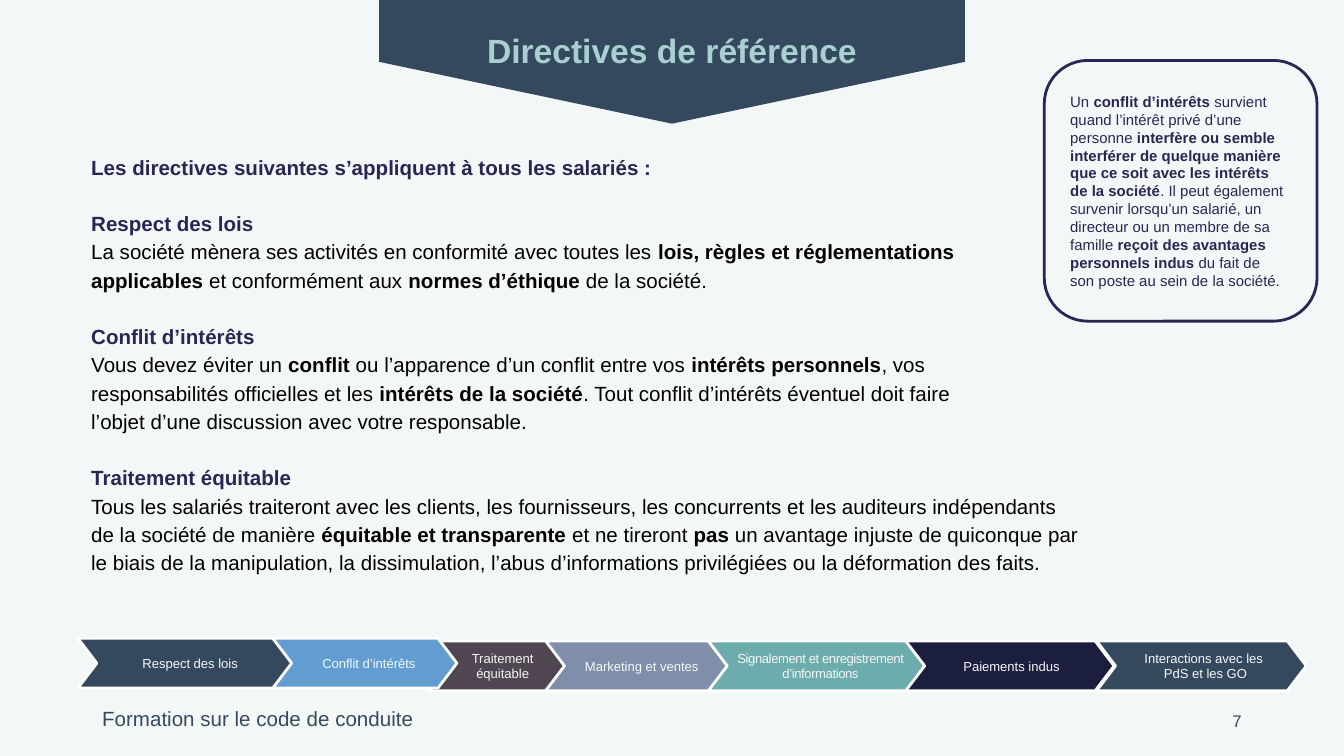
from pptx import Presentation
from pptx.dml.color import RGBColor
from pptx.enum.shapes import MSO_SHAPE as Shape
from pptx.enum.text import MSO_ANCHOR as Anchor, MSO_AUTO_SIZE as AutoSize, PP_ALIGN as Align
from pptx.util import Inches, Pt

COLORS = {
    "background": "F4F7F7", "slate": "34495E", "mint": "AACFD0",
    "navy": "242852", "black": "000000", "white": "FFFFFF",
    "plum": "4F4651", "midnight": "1B1E3D", "steel": "7F8FA9",
    "teal": "6DACAC", "blue": "629DD1",
}


def rgb(name):
    return RGBColor.from_string(COLORS[name])


def write(shape, paragraphs, size, color, insets, align=Align.LEFT, anchor=Anchor.TOP):
    """Fill a shape with text; asterisks switch bold on and off, newlines break lines."""
    frame = shape.text_frame
    frame.word_wrap = True
    frame.auto_size = AutoSize.NONE
    frame.vertical_anchor = anchor
    (frame.margin_left, frame.margin_top,
     frame.margin_right, frame.margin_bottom) = [Inches(inset) for inset in insets]
    for index, text in enumerate(paragraphs):
        para = frame.add_paragraph() if index else frame.paragraphs[0]
        para.alignment = align
        for part, piece in enumerate(text.split("*")):
            for row, words in enumerate(piece.split("\n")):
                if row:
                    para.add_line_break()
                if words:
                    span = para.add_run()
                    span.text = words
                    span.font.name = "Arial"
                    span.font.size = Pt(size)
                    span.font.bold = part % 2 == 1
                    span.font.color.rgb = rgb(color)
    return frame.paragraphs


# A 16:9 page
deck = Presentation()
deck.slide_width = Inches(10)
deck.slide_height = deck.slide_width * 9 // 16
page = deck.slides.add_slide(deck.slide_layouts[5])
page.background.fill.solid()
page.background.fill.fore_color.rgb = rgb("background")
SMALL = (0.07, 0.04, 0.07, 0.04)
WIDE = (0.1, 0.1, 0.1, 0.1)

# Title on its downward-pointing banner
title = page.shapes.title
title.left, title.top, title.width, title.height = [Inches(n) for n in (2.23, 0.18, 5.54, 0.38)]
write(title, ["*Directives de référence*"], 18, "mint", SMALL, Align.CENTER)

banner = page.shapes.add_shape(Shape.PENTAGON, Inches(4.54), Inches(-1.72), Inches(0.92), Inches(4.36))
banner.rotation = 90
banner.adjustments[0] = 0.5
banner.shadow.inherit = False
banner.fill.solid()
banner.fill.fore_color.rgb = rgb("slate")
banner.line.fill.background()
title._element.addprevious(banner._element)

# Footer and page number
footer = page.shapes.add_textbox(Inches(0.69), Inches(5.21), Inches(4.93), Inches(0.25))
write(footer, ["Formation sur le code de conduite"], 11, "slate", SMALL)
number = page.shapes.add_textbox(Inches(7.06), Inches(5.21), Inches(2.25), Inches(0.3))
write(number, ["7"], 9, "slate", SMALL, Align.RIGHT, Anchor.MIDDLE)

# Guidelines: an introduction, then headings each followed by a rule
guidelines = [
    "*Les directives suivantes s’appliquent à tous les salariés :*",
    "*Respect des lois*",
    "La société mènera ses activités en conformité avec toutes les *lois, règles et "
    "réglementations \napplicables* et conformément aux *normes d’éthique* de la société.",
    "*Conflit d’intérêts*",
    "Vous devez éviter un *conflit* ou l’apparence d’un conflit entre vos *intérêts personnels*, "
    "vos \nresponsabilités officielles et les *intérêts de la société*. Tout conflit d’intérêts "
    "éventuel doit faire \nl’objet d’une discussion avec votre responsable.",
    "*Traitement équitable*",
    "Tous les salariés traiteront avec les clients, les fournisseurs, les concurrents et les "
    "auditeurs indépendants \nde la société de manière *équitable et transparente* et ne tireront "
    "*pas* un avantage injuste de quiconque par le biais de la manipulation, la dissimulation, "
    "l’abus d’informations privilégiées ou la déformation des faits.",
]
body = page.shapes.add_textbox(Inches(0.58), Inches(1.07), Inches(7.65), Inches(3.52))
for index, para in enumerate(write(body, guidelines, 11, "black", WIDE)):
    para.line_spacing = 1.15 if index else 0.9
    if index % 2:
        para.space_before = Pt(15)
    if index % 2 or index == 0:
        para.runs[0].font.color.rgb = rgb("navy")

# Definition callout
callout = page.shapes.add_shape(Shape.ROUNDED_RECTANGLE, Inches(7.77), Inches(0.45), Inches(2.03), Inches(1.94))
callout.shadow.inherit = False
callout.fill.background()
callout.line.color.rgb = rgb("navy")
callout.line.width = Pt(1.5)
write(callout, [
    "Un *conflit d’intérêts* survient quand l’intérêt privé d’une personne *interfère ou semble "
    "interférer de quelque manière que ce soit avec les intérêts de la société*. Il peut également "
    "survenir lorsqu’un salarié, un directeur ou un membre de sa famille *reçoit des avantages "
    "personnels indus* du fait de \nson poste au sein de la société."
], 8, "navy", WIDE, anchor=Anchor.MIDDLE)

# Chapter chevrons, from back to front: label, left, top, width, fill
chapters = [
    ("Traitement équitable", 3.2, 4.77, 1.02, "plum"),
    ("Paiements indus ", 6.73, 4.77, 1.56, "midnight"),
    ("Marketing et ventes", 4.06, 4.77, 1.37, "steel"),
    ("Signalement et enregistrement d’informations", 5.27, 4.77, 1.61, "teal"),
    ("Respect des lois", 0.58, 4.75, 1.61, "slate"),
    ("Conflit d’intérêts", 2.03, 4.75, 1.37, "blue"),
    ("Interactions avec les \nPdS et les GO", 8.16, 4.77, 1.56, "slate"),
]
trail = page.shapes.add_group_shape()
for label, left, top, width, fill in chapters:
    chevron = trail.shapes.add_shape(Shape.CHEVRON, Inches(left), Inches(top), Inches(width), Inches(0.37))
    chevron.adjustments[0] = 0.38
    chevron.shadow.inherit = False
    chevron.fill.solid()
    chevron.fill.fore_color.rgb = rgb(fill)
    chevron.line.color.rgb = rgb("white")
    chevron.line.width = Pt(1.5)
    paras = write(chevron, [label], 7, "background", (0.06, 0, 0, 0), Align.CENTER, Anchor.MIDDLE)
    if fill == "teal":
        # Tighter letters keep the long label on two lines
        paras[0].runs[0].font._element.set("spc", "-20")

deck.save("out.pptx")
